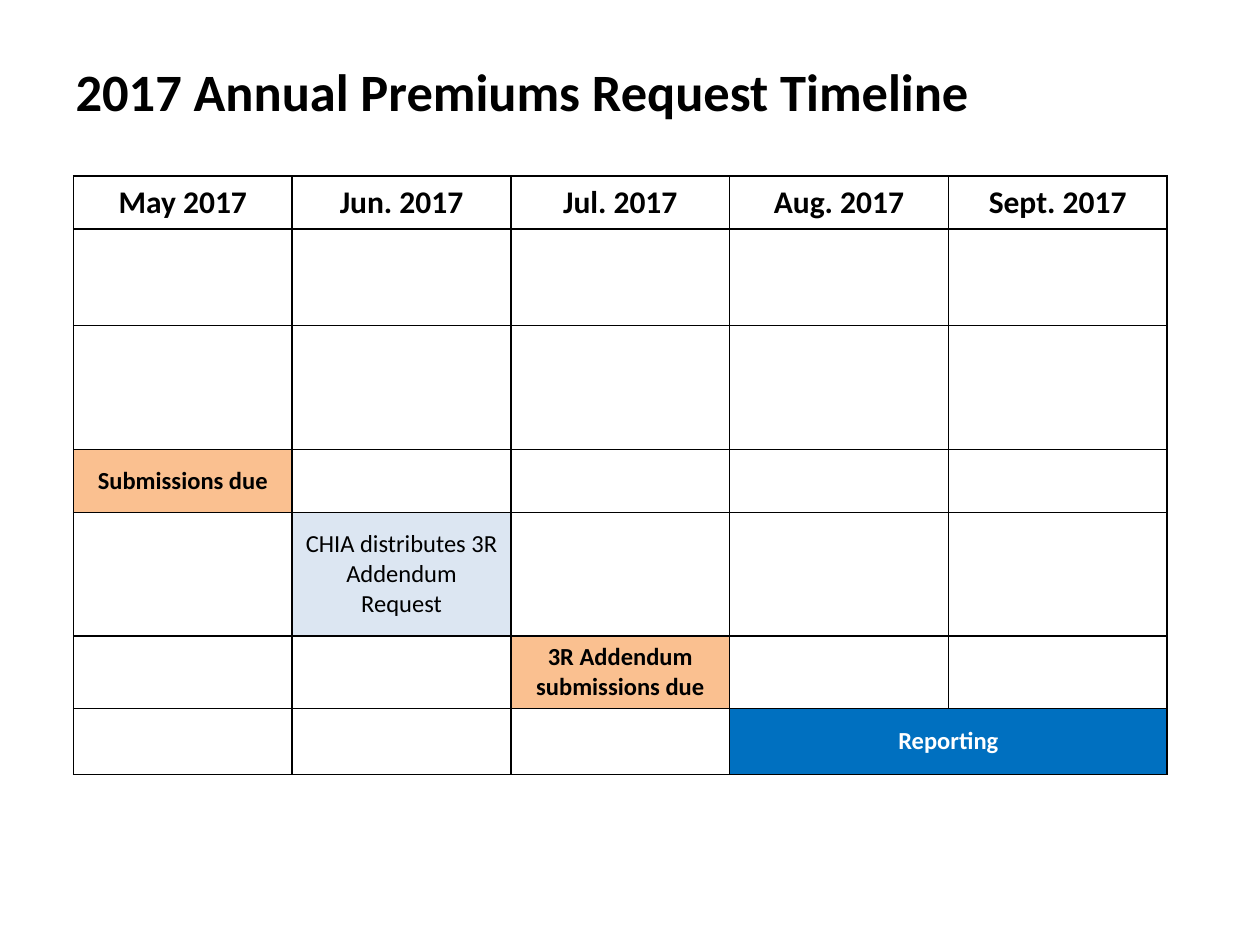
"""Build the 2017 annual premiums request timeline slide."""
from lxml.etree import SubElement
from pptx import Presentation
from pptx.dml.color import RGBColor
from pptx.enum.text import MSO_ANCHOR, PP_ALIGN
from pptx.oxml.ns import qn
from pptx.util import Pt

COLORS = {"black": "000000", "white": "FFFFFF", "due": "FAC090",
          "request": "DCE6F2", "report": "0070C0"}
MONTHS = ["May 2017", "Jun. 2017", "Jul. 2017", "Aug. 2017", "Sept. 2017"]
ROW_HEIGHTS = [30.5, 55, 71, 36, 70.5, 38, 38]
COLUMN_WIDTH = 125


def format_text(p, text, size, bold=True, color="black"):
    r = p.add_run()
    r.text = text
    for name, value in {"name": "Calibri", "size": Pt(size), "bold": bold}.items():
        setattr(r.font, name, value)
    r.font.color.rgb = RGBColor.from_string(COLORS[color])


def add_borders(cell):
    tcPr = cell._tc.get_or_add_tcPr()
    for side in ("lnL", "lnR", "lnT", "lnB"):
        ln = SubElement(tcPr, qn(f"a:{side}"), w=str(Pt(1)))
        fill = SubElement(ln, qn("a:solidFill"))
        SubElement(fill, qn("a:srgbClr"), val=COLORS["black"])


prs = Presentation()
prs.slide_width, prs.slide_height = Pt(720), Pt(540)
s = prs.slides.add_slide(prs.slide_layouts[5])

title = s.shapes.title
title.left, title.top, title.width, title.height = Pt(36), Pt(30), Pt(612), Pt(44)
tf = title.text_frame
tf.word_wrap = True
tf.vertical_anchor = MSO_ANCHOR.TOP
p = tf.paragraphs[0]
p.alignment = PP_ALIGN.LEFT
format_text(p, "2017 Annual Premiums Request Timeline", 30)

table = s.shapes.add_table(len(ROW_HEIGHTS), len(MONTHS), Pt(42), Pt(100.5),
                           Pt(COLUMN_WIDTH * len(MONTHS)), Pt(sum(ROW_HEIGHTS))).table
table.first_row = table.horz_banding = False
for column in table.columns:
    column.width = Pt(COLUMN_WIDTH)
for row, height in zip(table.rows, ROW_HEIGHTS):
    row.height = Pt(height)
for cell in table.iter_cells():
    add_borders(cell)
    cell.fill.background()
table.cell(6, 3).merge(table.cell(6, 4))

entries = [(0, i, month, 18, True, "black", None) for i, month in enumerate(MONTHS)]
entries += [
    (3, 0, "Submissions due", 14, True, "black", "due"),
    (4, 1, "CHIA distributes 3R Addendum Request", 14, False, "black", "request"),
    (5, 2, "3R Addendum submissions due", 14, True, "black", "due"),
    (6, 3, "Reporting", 14, True, "white", "report"),
]
for row, column, text, size, bold, color, fill in entries:
    cell = table.cell(row, column)
    cell.vertical_anchor = MSO_ANCHOR.MIDDLE
    p = cell.text_frame.paragraphs[0]
    p.alignment = PP_ALIGN.CENTER
    format_text(p, text, size, bold, color)
    if fill:
        cell.fill.solid()
        cell.fill.fore_color.rgb = RGBColor.from_string(COLORS[fill])

prs.save("out.pptx")
